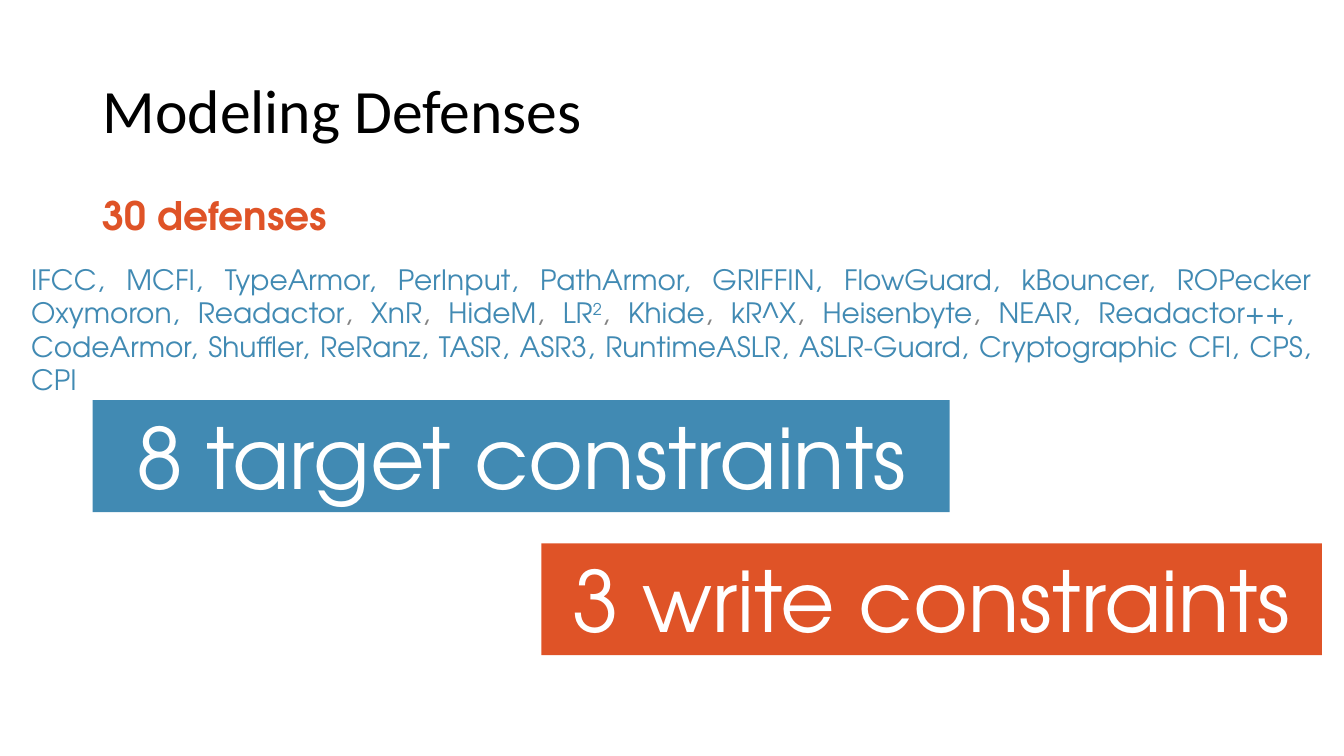
import dataclasses

import pptx
import pptx.dml.color
import pptx.enum.shapes
import pptx.enum.text
import pptx.util

Inches = pptx.util.Inches
Pt = pptx.util.Pt
ALIGN = pptx.enum.text.PP_ALIGN
ANCHOR = pptx.enum.text.MSO_ANCHOR


@dataclasses.dataclass(frozen=True)
class Theme:
    heading_font: str = "Calibri"
    body_font: str = "TeX Gyre Adventor"
    black: str = "000000"
    white: str = "FFFFFF"
    blue: str = "418AB3"
    orange: str = "DF5327"
    gray: str = "838383"
    title: int = 44
    subtitle: int = 28
    body: int = 20
    banner: int = 60


class Slide:
    def __init__(self, prs, theme):
        self.theme = theme
        self.shapes = prs.slides.add_slide(prs.slide_layouts[6]).shapes

    def run(self, p, text, size, color, font=None, bold=False, superscript=False):
        r = p.add_run()
        r.text = text
        r.font.name = font or self.theme.body_font
        r.font.size = Pt(size)
        r.font.bold = bold
        r.font.color.rgb = pptx.dml.color.RGBColor.from_string(color)
        if superscript:
            r._r.get_or_add_rPr().set("baseline", "30000")

    def text(self, x, y, w, h, anchor=ANCHOR.TOP, align=ALIGN.LEFT):
        sp = self.shapes.add_textbox(Inches(x), Inches(y), Inches(w), Inches(h))
        tf = sp.text_frame
        tf.word_wrap = True
        tf.vertical_anchor = anchor
        p = tf.paragraphs[0]
        p.alignment = align
        return p

    def banner(self, x, y, w, h, text, color):
        sp = self.shapes.add_shape(pptx.enum.shapes.MSO_SHAPE.RECTANGLE,
                                   Inches(x), Inches(y), Inches(w), Inches(h))
        sp.shadow.inherit = False
        sp.fill.solid()
        sp.fill.fore_color.rgb = pptx.dml.color.RGBColor.from_string(color)
        sp.line.fill.background()
        tf = sp.text_frame
        tf.word_wrap = True
        tf.vertical_anchor = ANCHOR.TOP
        p = tf.paragraphs[0]
        p.alignment = ALIGN.CENTER
        self.run(p, text, self.theme.banner, self.theme.white)


def main():
    prs = pptx.Presentation()
    prs.slide_width, prs.slide_height = Inches(13.33), Inches(7.5)
    theme = Theme()
    s = Slide(prs, theme)
    left, width = 0.92, 11.5

    # Title
    p = s.text(left, 0.4, width, 1.45, anchor=ANCHOR.MIDDLE)
    p.line_spacing = 0.9
    s.run(p, "Modeling Defenses", theme.title, theme.black, theme.heading_font)

    # Number of defenses
    p = s.text(left, 1.85, width, 5.54)
    p.space_before = Pt(10)
    s.run(p, "30 defenses", theme.subtitle, theme.orange, bold=True)

    # List of defenses: blue names, some set apart by gray commas
    p = s.text(0.21, 2.55, 12.9, 1.11, align=ALIGN.JUSTIFY)
    p.space_before = Pt(10)
    s.run(p, "IFCC, MCFI, TypeArmor, PerInput, PathArmor, GRIFFIN, FlowGuard, "
             "kBouncer, ROPecker Oxymoron, Readactor", theme.body, theme.blue)
    for name in ("XnR", "HideM", "LR", "Khide", "kR^X", "Heisenbyte",
                 "NEAR, Readactor++, "):
        s.run(p, ", ", theme.body, theme.gray)
        s.run(p, name, theme.body, theme.blue)
        if name == "LR":
            s.run(p, "2", theme.body, theme.blue, superscript=True)
    p.add_line_break()
    s.run(p, "CodeArmor, Shuffler, ReRanz, TASR, ASR3, RuntimeASLR, ASLR-Guard, "
             "Cryptographic CFI, CPS, CPI", theme.body, theme.blue)

    # Constraint banners
    s.banner(left, 3.97, 8.5, 1.11, "8 target constraints", theme.blue)
    s.banner(5.37, 5.39, 7.74, 1.11, "3 write constraints", theme.orange)

    prs.save("out.pptx")


if __name__ == "__main__":
    main()
